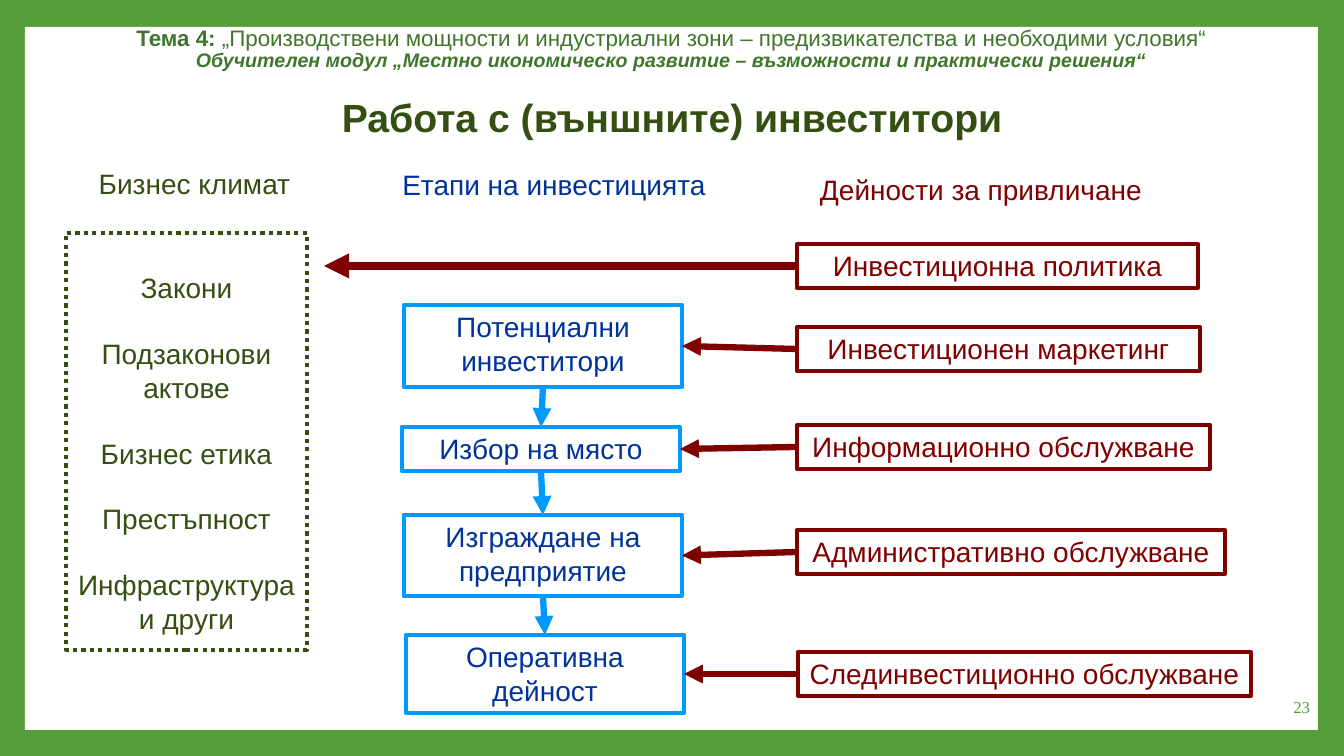
from dataclasses import dataclass

from lxml import etree
from pptx import Presentation
from pptx import util as u
from pptx.dml.color import RGBColor
from pptx.enum import dml, shapes, text
from pptx.oxml import ns

# Content: frames are (left, top, width, height) in px
TITLE = "Работа с (външните) инвеститори", (136, 88, 1072, 57)
HEADER_FRAME = (37, 15, 1269, 69)
TOPIC = "Тема 4: ", "„Производствени мощности и индустриални зони – предизвикателства и необходими условия“"
MODULE = "Обучителен модул „Местно икономическо развитие – възможности и практически решения“"
PAGE_NUMBER = "23", (1132, 687, 188, 40)
PANEL_FRAME = (25, 27, 1293, 703)

CLIMATE_FRAME = (66, 233, 241, 417)
CLIMATE = ["Закони", "Подзаконови актове", "Бизнес етика", "Престъпност",
           "Инфраструктура\vи други"]
HEADINGS = [
    ("Бизнес климат", "climate", (41, 162, 307, 44)),
    ("Етапи на инвестицията", "stage_text", (385, 163, 338, 44)),
    ("Дейности за привличане", "activity", (788, 168, 386, 44)),
]
STAGES = [  # text, left, top, height
    ("Потенциални инвеститори", 404, 305, 82),
    ("Избор на място", 402, 427, 44),
    ("Изграждане на предприятие", 404, 515, 81),
    ("Оперативна дейност", 406, 635, 78),
]
STAGE_WIDTH = 278
POLICY = "Инвестиционна политика", 797, 244, 401
ACTIVITIES = [  # text, left, top, width; one for each stage
    ("Инвестиционен маркетинг", 797, 327, 403),
    ("Информационно обслужване", 797, 425, 413),
    ("Административно обслужване", 797, 530, 428),
    ("Слединвестиционно обслужване", 798, 652, 453),
]
ACTIVITY_HEIGHT = 44
POLICY_ARROW_END = 324


@dataclass(frozen=True)
class Theme:
    font: str = "Arial"
    number_font: str = "Times New Roman"
    frame: str = "549E39"
    panel: str = "FFFFFF"
    header: str = "3F762B"
    climate: str = "354F12"
    stage_text: str = "003399"
    stage_line: str = "0099FF"
    activity: str = "800000"
    title_size: int = 28
    body_size: int = 20
    topic_size: int = 16
    module_size: int = 14
    number_size: int = 12
    border: int = 3
    arrow: float = 4.5
    policy_arrow: int = 6


theme = Theme()
PX = u.Inches(7.5) / 756


def px(value):
    return u.Emu(round(value * PX))


def place(frame):
    return [px(value) for value in frame]


def rgb(colour):
    return RGBColor.from_string(colour)


def style(para, size, colour, font=theme.font, align=text.PP_ALIGN.CENTER):
    para.alignment = align
    para.font.name = font
    para.font.size = u.Pt(size)
    para.font.color.rgb = rgb(colour)


def add_label(page, content, frame, size, colour, **options):
    box = page.shapes.add_textbox(*place(frame))
    box.text_frame.word_wrap = True
    para = box.text_frame.paragraphs[0]
    para.text = content
    style(para, size, colour, **options)
    return box


def add_box(page, lines, frame, line_colour, text_colour):
    box = page.shapes.add_shape(shapes.MSO_SHAPE.RECTANGLE, *place(frame))
    box.shadow.inherit = False
    box.fill.background()
    box.line.color.rgb = rgb(line_colour)
    box.line.width = u.Pt(theme.border)
    area = box.text_frame
    area.word_wrap = True
    area.vertical_anchor = text.MSO_ANCHOR.TOP
    area.text = "\n".join(lines)
    for para in area.paragraphs:
        style(para, theme.body_size, text_colour)
    return box


def add_arrow(page, source, source_side, colour, width, target=None, target_side=0, end=(0, 0)):
    arrow = page.shapes.add_connector(shapes.MSO_CONNECTOR.STRAIGHT, 0, 0, *end)
    arrow.begin_connect(source, source_side)
    if target is not None:
        arrow.end_connect(target, target_side)
    arrow.line.color.rgb = rgb(colour)
    arrow.line.width = u.Pt(width)
    properties = arrow.element.spPr
    etree.SubElement(properties.find(ns.qn("a:ln")), ns.qn("a:tailEnd"), type="triangle")
    etree.SubElement(properties, ns.qn("a:effectLst"))


def main():
    deck = Presentation()
    deck.slide_width, deck.slide_height = px(1344), px(756)
    page = deck.slides.add_slide(deck.slide_layouts[5])

    # Green frame around a white panel
    page.background.fill.solid()
    page.background.fill.fore_color.rgb = rgb(theme.frame)
    panel = page.shapes.add_shape(shapes.MSO_SHAPE.RECTANGLE, *place(PANEL_FRAME))
    panel.shadow.inherit = False
    panel.fill.solid()
    panel.fill.fore_color.rgb = rgb(theme.panel)
    panel.line.fill.background()

    # Title, in front of the panel
    title = page.shapes.title
    title.element.addprevious(panel.element)
    title.left, title.top, title.width, title.height = place(TITLE[1])
    title.text_frame.text = TITLE[0]
    title.text_frame.auto_size = text.MSO_AUTO_SIZE.NONE
    title.text_frame.vertical_anchor = text.MSO_ANCHOR.MIDDLE
    style(title.text_frame.paragraphs[0], theme.title_size, theme.climate)
    title.text_frame.paragraphs[0].font.bold = True

    # Running header and page number
    header = add_label(page, "", HEADER_FRAME, theme.topic_size, theme.header).text_frame
    header.vertical_anchor = text.MSO_ANCHOR.MIDDLE
    topic, module = header.paragraphs[0], header.add_paragraph()
    for part, bold in zip(TOPIC, (True, False)):
        span = topic.add_run()
        span.text = part
        span.font.bold = bold
    module.text = MODULE
    style(module, theme.module_size, theme.header)
    module.font.bold = module.font.italic = True
    for para in header.paragraphs:
        para.line_spacing = 0.9
    number = add_label(page, *PAGE_NUMBER, theme.number_size, theme.frame,
                       font=theme.number_font, align=text.PP_ALIGN.RIGHT)
    number.text_frame.vertical_anchor = text.MSO_ANCHOR.MIDDLE

    # Column headings
    for content, role, frame in HEADINGS:
        add_label(page, content, frame, theme.body_size, getattr(theme, role))

    # Business climate list
    climate = add_box(page, CLIMATE, CLIMATE_FRAME, theme.climate, theme.climate)
    climate.line.dash_style = dml.MSO_LINE.ROUND_DOT
    climate.text_frame.margin_top = px(38)
    for para in climate.text_frame.paragraphs[1:]:
        para.space_before = u.Pt(23)

    # Stages and activities
    stages = [add_box(page, [content], (left, top, STAGE_WIDTH, height),
                      theme.stage_line, theme.stage_text)
              for content, left, top, height in STAGES]
    policy, *activities = [add_box(page, [content], (left, top, width, ACTIVITY_HEIGHT),
                                   theme.activity, theme.activity)
                           for content, left, top, width in [POLICY, *ACTIVITIES]]

    # Arrows
    policy_end = px(POLICY_ARROW_END), policy.top + policy.height // 2
    add_arrow(page, policy, 1, theme.activity, theme.policy_arrow, end=policy_end)
    for activity, stage in zip(activities, stages):
        add_arrow(page, activity, 1, theme.activity, theme.arrow, stage, 3)
    for stage, following in zip(stages, stages[1:]):
        add_arrow(page, stage, 2, theme.stage_line, theme.arrow, following, 0)

    deck.save("out.pptx")


if __name__ == "__main__":
    main()
